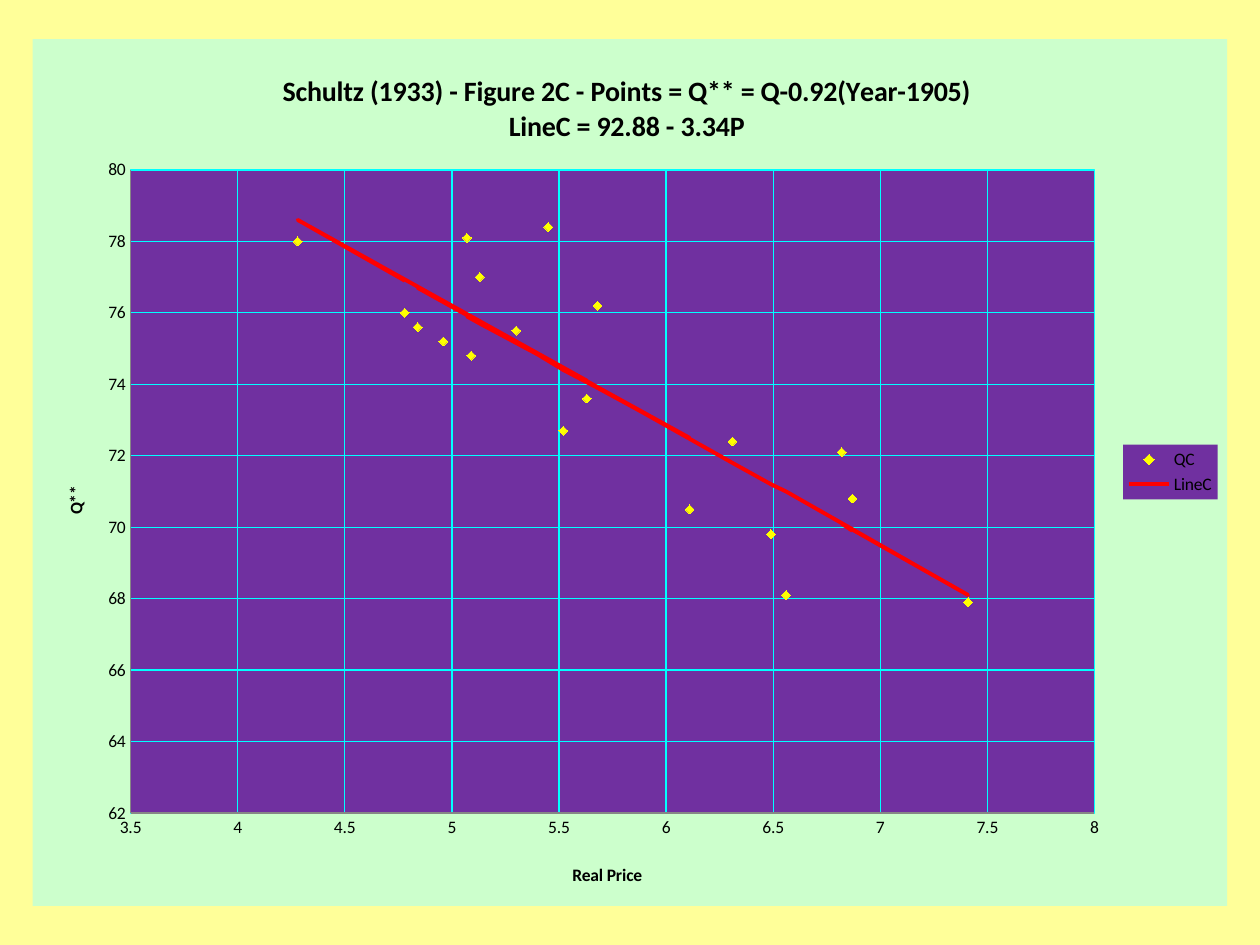
from dataclasses import dataclass

from lxml import etree
from pptx import Presentation
from pptx import util as u
from pptx.chart.data import XyChartData
from pptx.dml.color import RGBColor
from pptx.enum import chart as ch
from pptx.oxml import ns, parse_xml


@dataclass(frozen=True)
class Theme:
    """Colours, typeface and type sizes of the slide."""
    font: str = "Calibri"
    page: str = "FFFF99"
    panel: str = "CCFFCC"
    plot: str = "7030A0"
    grid: str = "00FFFF"
    axis: str = "868686"
    points: str = "FFFF00"
    trend: str = "FF0000"
    ink: str = "000000"
    title_size: int = 16
    body_size: int = 10


THEME = Theme()

PRICE_QUANTITY = [
    (6.87, 70.8), (6.82, 72.1), (7.41, 67.9), (6.56, 68.1), (6.49, 69.8),
    (6.31, 72.4), (5.30, 75.5), (5.52, 72.7), (5.68, 76.2), (6.11, 70.5),
    (4.96, 75.2), (4.84, 75.6), (5.45, 78.4), (5.07, 78.1), (5.13, 77.0),
    (5.63, 73.6), (5.09, 74.8), (4.28, 78.0), (4.78, 76.0),
]


def paint(fill, colour):
    """Give a fill one solid colour."""
    fill.solid()
    fill.fore_color.rgb = RGBColor.from_string(colour)


def stroke(line, colour, width):
    """Give a line its colour and its width in points."""
    paint(line.fill, colour)
    line.width = u.Pt(width)


def style_font(font, size=THEME.body_size, bold=False, colour=THEME.ink):
    """Set typeface, size, weight and colour."""
    font.name = THEME.font
    font.size = u.Pt(size)
    font.bold = bold
    font.color.rgb = RGBColor.from_string(colour)


def write(frame, wording, **style):
    """Fill a text frame and format each of its runs."""
    frame.text = wording
    for paragraph in frame.paragraphs:
        for run in paragraph.runs:
            style_font(run.font, **style)


def place(part, position, **fractions):
    """Fix a chart part at fractions of the chart area."""
    for old in part.findall(ns.qn("c:layout")):
        part.remove(old)
    layout = etree.Element(ns.qn("c:layout"))
    manual = etree.SubElement(layout, ns.qn("c:manualLayout"))
    if part.tag == ns.qn("c:plotArea"):
        etree.SubElement(manual, ns.qn("c:layoutTarget"), val="inner")
    for mode in ("xMode", "yMode"):
        etree.SubElement(manual, ns.qn(f"c:{mode}"), val="edge")
    for side, fraction in fractions.items():
        etree.SubElement(manual, ns.qn(f"c:{side}"), val=str(fraction))
    part.insert(position, layout)


def area_format(fill, border=None):
    """Make the shape properties of a chart area."""
    solid = '<a:solidFill><a:srgbClr val="{}"/></a:solidFill>'
    edge = solid.format(border) if border else "<a:noFill/>"
    return parse_xml(
        f'<c:spPr {ns.nsdecls("c", "a")}>{solid.format(fill)}'
        f'<a:ln w="9525">{edge}</a:ln></c:spPr>')


def style_axis(axis, caption, low, high, step, number_format, **corner):
    """Set the scale, grid, labels and caption of an axis."""
    axis.minimum_scale, axis.maximum_scale, axis.major_unit = low, high, step
    axis.crosses = ch.XL_AXIS_CROSSES.MINIMUM
    axis.major_tick_mark = axis.minor_tick_mark = ch.XL_TICK_MARK.NONE
    axis.has_major_gridlines = True
    stroke(axis.major_gridlines.format.line, THEME.grid, 0.75)
    stroke(axis.format.line, THEME.axis, 0.75)
    axis.tick_labels.number_format = number_format
    axis.tick_labels.number_format_is_linked = False
    style_font(axis.tick_labels.font)
    write(axis.axis_title.text_frame, caption, bold=True)
    place(axis.axis_title._element, 1, **corner)


def style_series(points, trend):
    """Show observations as diamonds and the fitted values as a line."""
    points.format.line.fill.background()
    points.marker.style = ch.XL_MARKER_STYLE.DIAMOND
    points.marker.size = 5
    paint(points.marker.format.fill, THEME.points)
    stroke(points.marker.format.line, THEME.points, 0.75)
    trend.marker.style = ch.XL_MARKER_STYLE.NONE
    stroke(trend.format.line, THEME.trend, 2.25)
    points.smooth = trend.smooth = False


def style_legend(chart):
    """Put the legend on its own panel at the right."""
    chart.has_legend = True
    legend = chart.legend
    legend.position = ch.XL_LEGEND_POSITION.RIGHT
    legend.include_in_layout = False
    style_font(legend.font)
    place(legend._element, 1, x=0.913, y=0.468, w=0.079, h=0.063)
    legend._element.find(ns.qn("c:txPr")).addprevious(area_format(THEME.plot))


def demand_data():
    """Collect the observations and the line fitted to them."""
    demand = XyChartData()
    observed = demand.add_series("QC")
    fitted = demand.add_series("LineC")
    for price, quantity in PRICE_QUANTITY:
        observed.add_data_point(price, quantity)
        fitted.add_data_point(price, round(92.88 - 3.34 * price, 1))
    return demand


def add_demand_chart(slide):
    """Add the scatter chart of quantity against real price."""
    chart = slide.shapes.add_chart(
        ch.XL_CHART_TYPE.XY_SCATTER, u.Inches(0.26), u.Inches(0.31),
        u.Inches(9.48), u.Inches(6.88), demand_data()).chart
    style_font(chart.font)
    chart.plots[0].vary_by_categories = False
    chart.has_title = True
    write(chart.chart_title.text_frame,
          "Schultz (1933) - Figure 2C - Points = Q** = Q-0.92(Year-1905)\n"
          "LineC = 92.88 - 3.34P", size=THEME.title_size, bold=True)
    place(chart.chart_title._element, 1, x=0.206, y=0.035)
    style_axis(chart.category_axis, "Real Price", 3.5, 8, 0.5, "General",
               x=0.449, y=0.948)
    style_axis(chart.value_axis, "Q**", 62, 80, 2, "0", x=0.024, y=0.512)
    style_series(*chart.plots[0].series)
    style_legend(chart)
    frame = chart._chartSpace.find(ns.qn("c:chart"))
    frame.addnext(area_format(THEME.panel))
    plot_area = frame.find(ns.qn("c:plotArea"))
    place(plot_area, 0, x=0.082, y=0.151, w=0.807, h=0.742)
    plot_area.append(area_format(THEME.plot, THEME.grid))


def main():
    """Build and save the slide."""
    deck = Presentation()
    deck.slide_width, deck.slide_height = u.Inches(10), u.Inches(7.5)
    slide = deck.slides.add_slide(deck.slide_layouts[6])
    paint(slide.background.fill, THEME.page)
    add_demand_chart(slide)
    deck.save("out.pptx")


if __name__ == "__main__":
    main()
